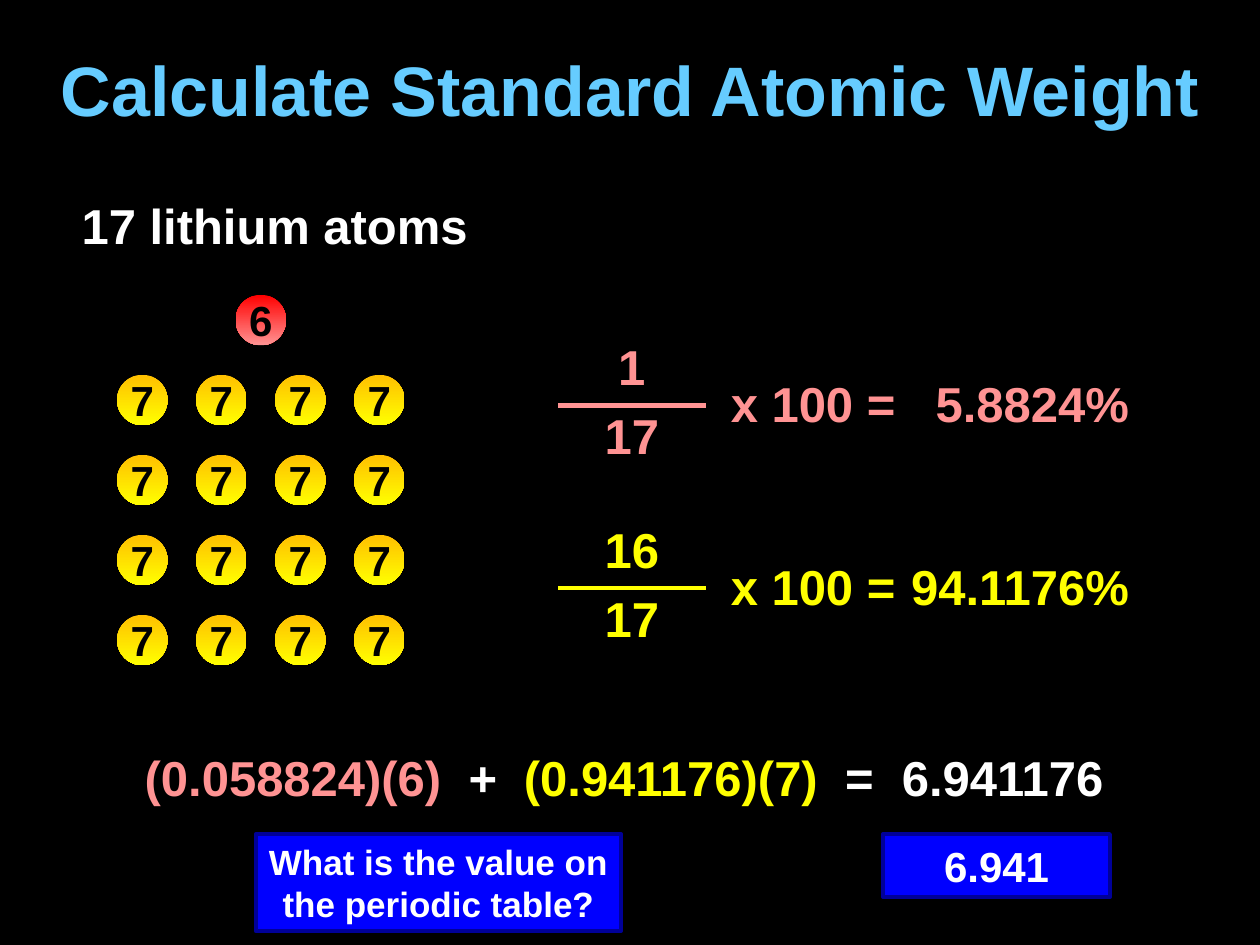
from lxml import etree
from pptx import Presentation
from pptx import util as u
from pptx.dml.color import RGBColor
from pptx.enum import shapes, text
from pptx.oxml import ns

# Content
COLORS = {"black": "000000", "white": "FFFFFF", "sky": "66CCFF", "red": "FF0000",
          "pink": "FF9393", "amber": "FFC000", "yellow": "FFFF00",
          "blue": "0000FF", "navy": "000099"}
TITLE = "Calculate Standard Atomic Weight"
COUNT = "17 lithium atoms"
SHADES = {"6": ("red", "pink"), "7": ("amber", "yellow")}
ATOM_ROWS = ["6", "7777", "7777", "7777", "7777"]
FRACTIONS = [("1", "17", "x 100 =\t5.8824%", "pink", 2.67),
             ("16", "17", "x 100 =\t94.1176%", "yellow", 4.12)]
SUM = [("(0.058824)(6)", "pink"), ("\t+", "white"), ("\t(0.941176)(7)", "yellow"),
       ("\t=", "white"), ("\t6.941176", "white")]
SUM_TABS = [2.57, 3.01, 5.56, 6.01]
BOXES = [("What is the value on the periodic table?", 20, (2.03, 6.62, 2.9, 0.77)),
         ("6.941", 24, (7.01, 6.62, 1.8, 0.5))]

# Layout in inches
ATOM_SIZE, ATOM_LEFT, ATOM_TOP = 0.4, 0.93, 2.34
COLUMN_STEP, ROW_STEP, COLUMNS = 0.627, 0.635, 4
TABLE_LEFT, TABLE_COLUMNS, TABLE_ROW = 4.43, (1.17, 3.8), 0.53
NO_STYLE = "{2D5ABB26-0587-4C30-8999-92F81FD0307C}"
ALIGN, ANCHOR = text.PP_ALIGN, text.MSO_ANCHOR


def rgb(name):
    return RGBColor.from_string(COLORS[name])


def inches(*values):
    return [u.Inches(value) for value in values]


def style(span, size, color):
    span.font.name, span.font.size, span.font.bold = "Arial", u.Pt(size), True
    span.font.color.rgb = rgb(color)


def write(frame, words, size, color, align=ALIGN.CENTER):
    frame.text = words
    para = frame.paragraphs[0]
    para.alignment = align
    style(para.runs[0], size, color)
    return para


def set_margins(holder, left, top, right, bottom):
    holder.margin_left, holder.margin_top, holder.margin_right, holder.margin_bottom = inches(
        left, top, right, bottom)


def add_label(page, words, size, color, place, anchor=ANCHOR.TOP):
    frame = page.shapes.add_textbox(*inches(*place)).text_frame
    frame.word_wrap, frame.vertical_anchor = True, anchor
    return write(frame, words, size, color)


def add_tabs(para, stops):
    tab_list = etree.SubElement(para._p.get_or_add_pPr(), ns.qn("a:tabLst"))
    for position, align in stops:
        etree.SubElement(tab_list, ns.qn("a:tab"), pos=str(u.Inches(position)), algn=align)


def add_border(cell, side, color):
    line = etree.Element(ns.qn(f"a:{side}"), w=str(u.Pt(3)))
    fill = etree.SubElement(line, ns.qn("a:solidFill"))
    etree.SubElement(fill, ns.qn("a:srgbClr"), val=COLORS[color])
    cell._tc.get_or_add_tcPr().insert(0, line)


def add_atom(group, mass, left, top):
    atom = group.shapes.add_shape(shapes.MSO_SHAPE.OVAL, *inches(left, top, ATOM_SIZE, ATOM_SIZE))
    atom.shadow.inherit = False
    atom.line.fill.background()
    atom.fill.gradient()
    atom.fill.gradient_angle = 270
    for stop, shade in zip(atom.fill.gradient_stops, SHADES[mass]):
        stop.color.rgb = rgb(shade)
    frame = atom.text_frame
    set_margins(frame, 0, 0, 0, 0)
    frame.vertical_anchor = ANCHOR.MIDDLE
    write(frame, mass, 24, "black")


def add_fraction(page, top_number, bottom_number, result, color, top):
    table = page.shapes.add_table(
        2, 2, *inches(TABLE_LEFT, top, sum(TABLE_COLUMNS), 2 * TABLE_ROW)).table
    table._tbl.tblPr.find(ns.qn("a:tableStyleId")).text = NO_STYLE
    table.first_row = table.horz_banding = False
    for column, width in zip(table.columns, TABLE_COLUMNS):
        column.width = u.Inches(width)
    for row in table.rows:
        row.height = u.Inches(TABLE_ROW)
    for cell in table.iter_cells():
        cell.fill.background()
        set_margins(cell, 0.1, 0.04, 0.1, 0.04)
    for row, (number, side) in enumerate([(top_number, "lnB"), (bottom_number, "lnT")]):
        write(table.cell(row, 0).text_frame, number, 28, color)
        add_border(table.cell(row, 0), side, color)
    answer = table.cell(0, 1)
    answer.merge(table.cell(1, 1))
    answer.vertical_anchor = ANCHOR.MIDDLE
    answer.margin_left = u.Inches(0.2)
    para = write(answer.text_frame, result, 28, color, ALIGN.LEFT)
    add_tabs(para, [(3.16, "r")])


def main():
    deck = Presentation()
    deck.slide_width, deck.slide_height = inches(10, 7.5)
    page = deck.slides.add_slide(deck.slide_layouts[6])
    page.background.fill.solid()
    page.background.fill.fore_color.rgb = rgb("black")

    # Title
    add_label(page, TITLE, 40, "sky", (0.2, 0.3, 9.6, 0.8), ANCHOR.MIDDLE)

    # Atoms, each row centred on the grid
    group = page.shapes.add_group_shape()
    for row, masses in enumerate(ATOM_ROWS):
        indent = (COLUMNS - len(masses)) / 2
        for column, mass in enumerate(masses):
            add_atom(group, mass, ATOM_LEFT + (indent + column) * COLUMN_STEP,
                     ATOM_TOP + row * ROW_STEP)

    # Percentages
    for fraction in FRACTIONS:
        add_fraction(page, *fraction)

    # Atom count and weighted sum
    add_label(page, COUNT, 28, "white", (0.53, 1.5, 3.3, 0.57))
    para = add_label(page, SUM[0][0], 28, SUM[0][1], (1.05, 5.88, 7.91, 0.57))
    para.alignment = ALIGN.LEFT
    add_tabs(para, [(stop, "l") for stop in SUM_TABS])
    for words, color in SUM[1:]:
        span = para.add_run()
        span.text = words
        style(span, 28, color)

    # Question and answer boxes
    for words, size, place in BOXES:
        box = page.shapes.add_shape(shapes.MSO_SHAPE.RECTANGLE, *inches(*place))
        box.shadow.inherit = False
        box.fill.solid()
        box.fill.fore_color.rgb = rgb("blue")
        box.line.color.rgb = rgb("navy")
        box.line.width = u.Pt(2.25)
        box.text_frame.word_wrap = True
        box.text_frame.vertical_anchor = ANCHOR.MIDDLE
        write(box.text_frame, words, size, "white")

    deck.save("out.pptx")


if __name__ == "__main__":
    main()
